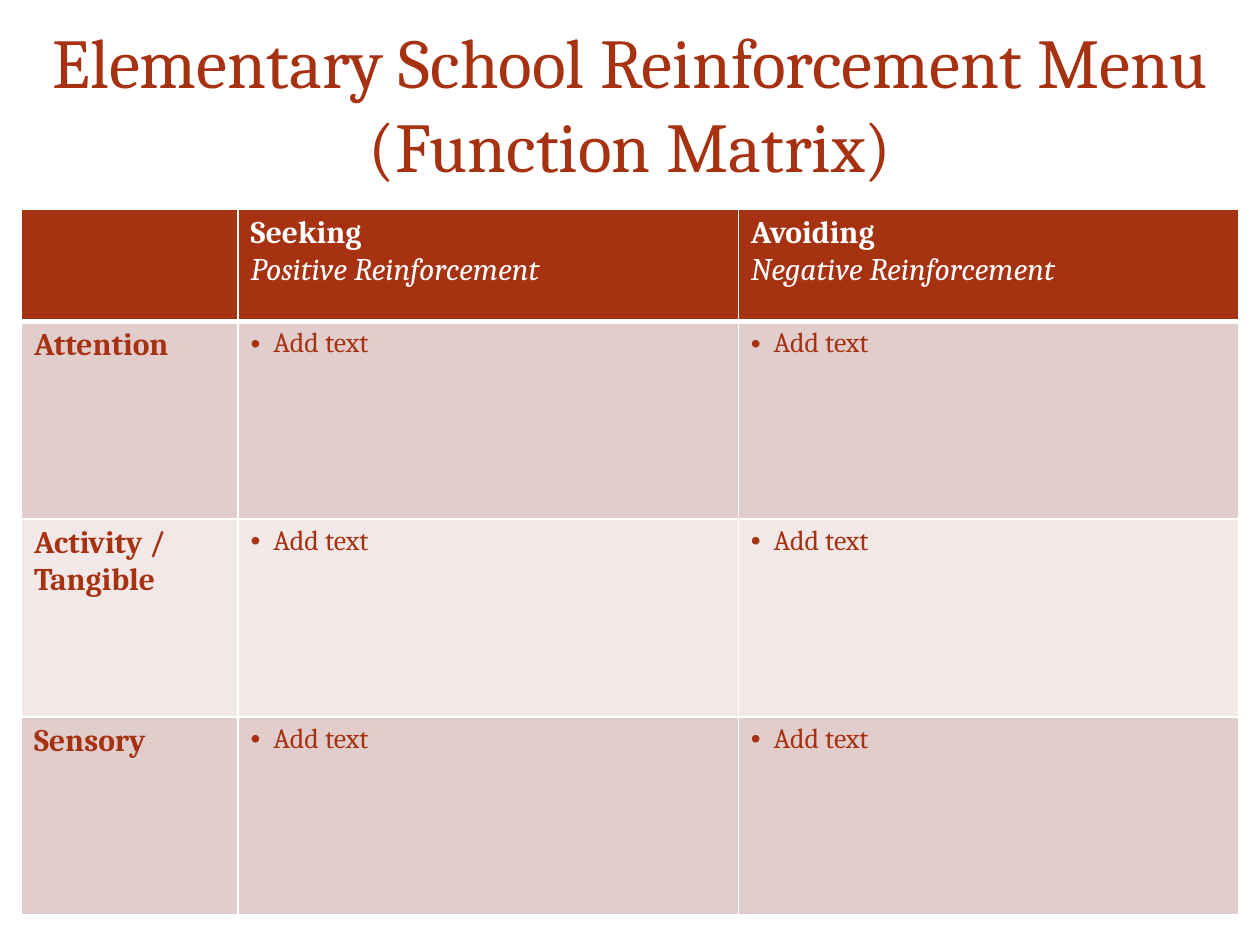
import pptx
import pptx.util
import pptx.dml.color
import pptx.enum.text
import pptx.oxml
import pptx.oxml.ns

HUES = {"rust": "A63212", "white": "FFFFFF", "rose": "E1CECC", "pale": "F1E8E7"}
FONT = "Cambria"
WIDE, HIGH = 10, 7.5


class Deck:
    """Holds the style and the current slide."""

    def __init__(self):
        self.show = pptx.Presentation()
        self.show.slide_width = pptx.util.Inches(WIDE)
        self.show.slide_height = pptx.util.Inches(HIGH)
        self.slide = self.show.slides.add_slide(self.show.slide_layouts[5])

    def hue(self, name):
        return pptx.dml.color.RGBColor.from_string(HUES[name])

    def across(self, share):
        return int(self.show.slide_width * share)

    def down(self, share):
        return int(self.show.slide_height * share)

    def run(self, para, text, size, hue, bold=False, slant=False):
        run = para.add_run()
        run.text = text
        font = run.font
        font.name, font.size = FONT, pptx.util.Pt(size)
        font.bold, font.italic = bold, slant
        font.color.rgb = self.hue(hue)

    def title(self, text, top, height):
        box = self.slide.shapes.title
        box.left, box.top = 0, self.down(top)
        box.width, box.height = self.across(1), self.down(height)
        frame = box.text_frame
        frame.word_wrap = True
        frame.auto_size = pptx.enum.text.MSO_AUTO_SIZE.NONE
        frame.vertical_anchor = pptx.enum.text.MSO_ANCHOR.MIDDLE
        para = frame.paragraphs[0]
        para.alignment = pptx.enum.text.PP_ALIGN.CENTER
        self.run(para, text, 40, "rust")

    def table(self, left, top, cols, rows):
        frame = self.slide.shapes.add_table(
            len(rows), len(cols), self.across(left), self.down(top),
            self.across(sum(cols)), self.down(sum(rows)))
        grid = frame.table
        for col, share in zip(grid.columns, cols):
            col.width = self.across(share)
        for row, share in zip(grid.rows, rows):
            row.height = self.down(share)
        return grid

    def cell(self, cell, fill, top=1, base=1):
        props = cell._tc.get_or_add_tcPr()
        for side, width in zip("LRTB", (1, 1, top, base)):
            props.append(pptx.oxml.parse_xml(
                f'<a:ln{side} {pptx.oxml.ns.nsdecls("a")} w="{pptx.util.Pt(width)}">'
                f'<a:solidFill><a:srgbClr val="{HUES["white"]}"/></a:solidFill>'
                f'</a:ln{side}>'))
        cell.fill.solid()
        cell.fill.fore_color.rgb = self.hue(fill)
        return cell.text_frame.paragraphs[0]

    def bullet(self, para, text):
        props = para._p.get_or_add_pPr()
        hang = pptx.util.Inches(0.18)
        props.set("marL", str(hang))
        props.set("indent", str(-hang))
        for tag in ('buFont typeface="Arial"', 'buChar char="•"'):
            name, rest = tag.split(" ")
            props.append(pptx.oxml.parse_xml(
                f'<a:{name} {pptx.oxml.ns.nsdecls("a")} {rest}/>'))
        self.run(para, text, 16, "rust")


def main():
    deck = Deck()
    deck.title("Elementary School Reinforcement Menu (Function Matrix)",
               0.02 / HIGH, 1.58 / HIGH)

    # Matrix grid
    heads = [None, ("Seeking", "Positive Reinforcement"),
             ("Avoiding", "Negative Reinforcement")]
    kinds = ["Attention", "Activity / Tangible", "Sensory"]
    grid = deck.table(0.17 / WIDE, 1.66 / HIGH,
                      [1.72 / WIDE] + [3.97 / WIDE] * 2,
                      [0.89 / HIGH] + [1.57 / HIGH] * len(kinds))

    # Header row
    for col, head in enumerate(heads):
        cell = grid.cell(0, col)
        para = deck.cell(cell, "rust", base=3)
        if head:
            deck.run(para, head[0], 18, "white", bold=True)
            deck.run(cell.text_frame.add_paragraph(), head[1], 18, "white", slant=True)

    # One row for each function
    for row, kind in enumerate(kinds, 1):
        fill = "rose" if row % 2 else "pale"
        top = 3 if row == 1 else 1
        deck.run(deck.cell(grid.cell(row, 0), fill, top), kind, 18, "rust", bold=True)
        for col in range(1, len(heads)):
            deck.bullet(deck.cell(grid.cell(row, col), fill, top), "Add text")

    deck.show.save("out.pptx")


if __name__ == "__main__":
    main()
